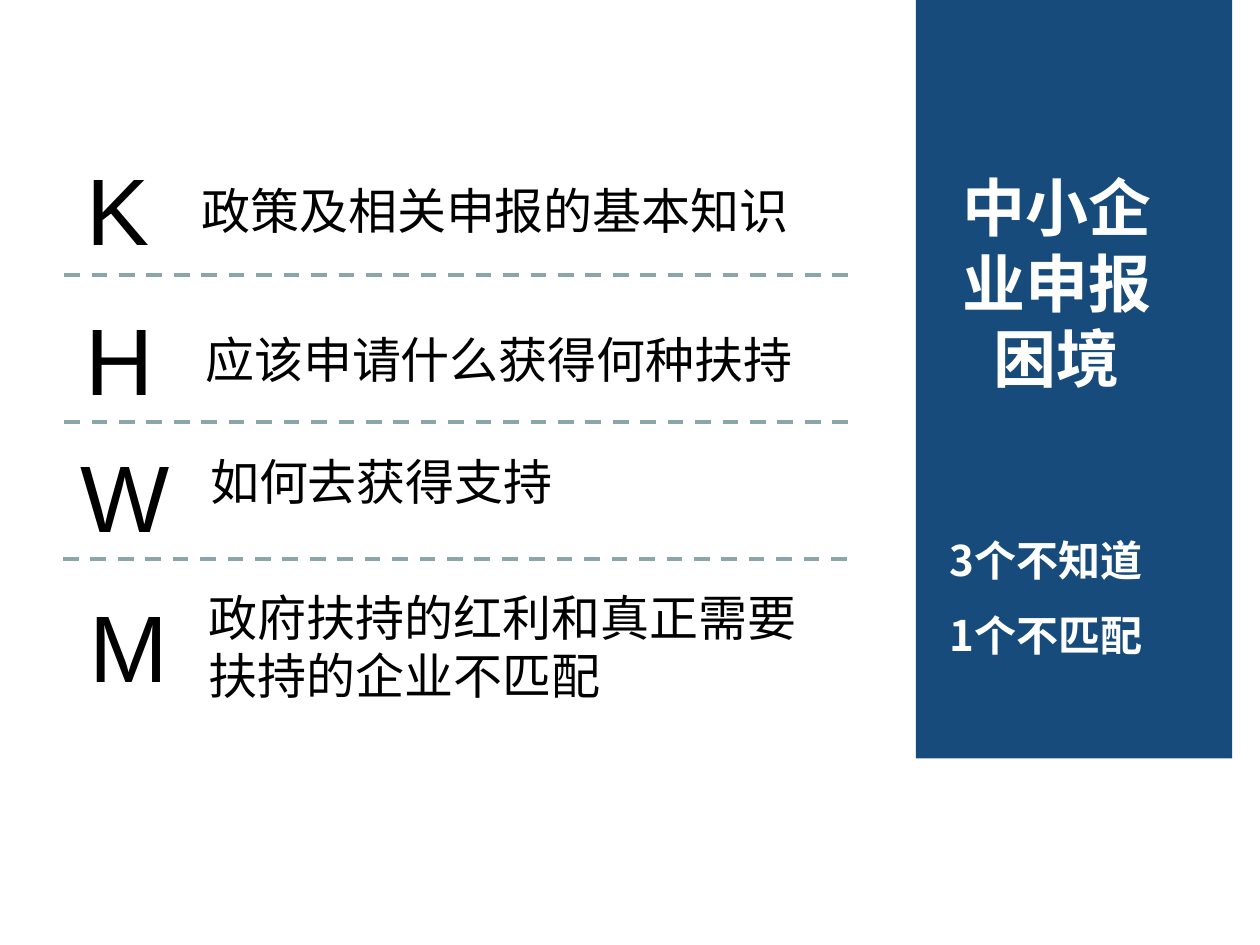
from dataclasses import dataclass

from lxml import etree
from pptx import Presentation
from pptx.dml.color import RGBColor
from pptx.enum import dml, shapes, text
from pptx.oxml.ns import qn
from pptx.util import Pt

COLOURS = {"panel": "174B7B", "divider": "8AA6A8", "body": "000000", "light": "FFFFFF"}
CJK = "Noto Sans CJK SC"
LATIN = "Arial"
LEFT, CENTRE = text.PP_ALIGN.LEFT, text.PP_ALIGN.CENTER


@dataclass
class Box:
    left: float
    top: float
    width: float
    height: float


@dataclass
class Style:
    size: float
    colour: str
    font: str = CJK
    bold: bool = False
    align: text.PP_ALIGN = LEFT
    spacing: float = 1.0
    wrap: bool = True


@dataclass
class Problem:
    letter: str
    letter_box: Box
    wording: str
    wording_box: Box


@dataclass
class Divider:
    left: float
    top: float


def rgb(name: str) -> RGBColor:
    return RGBColor.from_string(COLOURS[name])


def add_text(slide, wording: str, box: Box, style: Style) -> None:
    label = slide.shapes.add_textbox(Pt(box.left), Pt(box.top), Pt(box.width), Pt(box.height))
    frame = label.text_frame
    frame.word_wrap = style.wrap
    frame.auto_size = text.MSO_AUTO_SIZE.SHAPE_TO_FIT_TEXT
    frame.text = wording
    for paragraph in frame.paragraphs:
        paragraph.alignment = style.align
        paragraph.line_spacing = style.spacing
        for run in paragraph.runs:
            run.font.size = Pt(style.size)
            run.font.bold = style.bold
            run.font.name = style.font
            run.font.color.rgb = rgb(style.colour)
            # East Asian characters take their own typeface entry
            east_asian = etree.SubElement(run.font._element, qn("a:ea"))
            east_asian.set("typeface", style.font)


def add_divider(slide, divider: Divider, length: float) -> None:
    rule = slide.shapes.add_connector(
        shapes.MSO_CONNECTOR.STRAIGHT,
        Pt(divider.left), Pt(divider.top), Pt(divider.left + length), Pt(divider.top))
    rule.line.color.rgb = rgb("divider")
    rule.line.width = Pt(2.25)
    rule.line.dash_style = dml.MSO_LINE.DASH
    etree.SubElement(rule._element.spPr, qn("a:effectLst"))


def add_panel(slide, box: Box) -> None:
    panel = slide.shapes.add_shape(
        shapes.MSO_SHAPE.RECTANGLE, Pt(box.left), Pt(box.top), Pt(box.width), Pt(box.height))
    panel.shadow.inherit = False
    panel.fill.solid()
    panel.fill.fore_color.rgb = rgb("panel")
    panel.line.fill.background()


TITLE = Style(36, "light", bold=True, align=CENTRE)
SUMMARY = Style(24, "light", bold=True, spacing=1.5)
WORDING = Style(28, "body")
LETTER = Style(54, "body", font=LATIN, align=CENTRE, wrap=False)

PROBLEMS = [
    Problem("K", Box(42.5, 82.8, 50.4, 72),
            "政策及相关申报的基本知识", Box(108, 99.4, 359.3, 41)),
    Problem("H", Box(41.8, 168.5, 53.3, 72),
            "应该申请什么获得何种扶持", Box(110.2, 185, 368.6, 41)),
    Problem("W", Box(38.9, 247, 65.5, 72),
            "如何去获得支持", Box(113, 254.2, 311, 41)),
    Problem("M", Box(43.9, 332.6, 59, 72),
            "政府扶持的红利和真正需要扶持的企业不匹配", Box(112.3, 331.9, 352.8, 74.9)),
]
DIVIDERS = [Divider(36.7, 157), Divider(36.7, 241.2), Divider(36, 319.7)]
DIVIDER_LENGTH = 447.8


def main() -> None:
    deck = Presentation()
    deck.slide_width, deck.slide_height = Pt(720), Pt(540)
    slide = deck.slides.add_slide(deck.slide_layouts[6])

    # Side panel with title and summary
    add_panel(slide, Box(523.4, -2.2, 180.7, 435.6))
    add_text(slide, "3个不知道\n1个不匹配", Box(535.7, 287.3, 151.9, 93.6), SUMMARY)
    add_text(slide, "中小企业申报困境", Box(542.2, 92.9, 123.1, 138.2), TITLE)

    # Lettered problems
    for problem in PROBLEMS:
        add_text(slide, problem.wording, problem.wording_box, WORDING)
        add_text(slide, problem.letter, problem.letter_box, LETTER)

    # Dashed rules between the problems
    for divider in DIVIDERS:
        add_divider(slide, divider, DIVIDER_LENGTH)

    deck.save("out.pptx")


if __name__ == "__main__":
    main()
